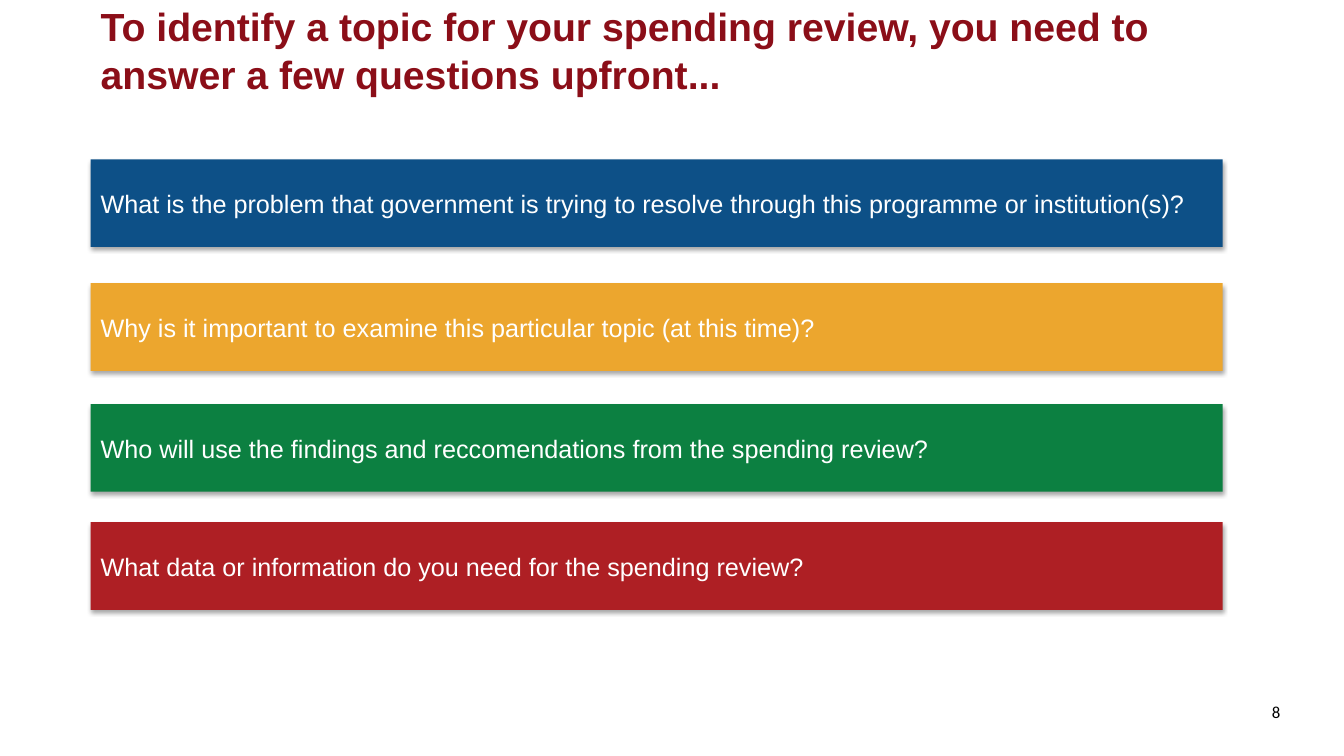
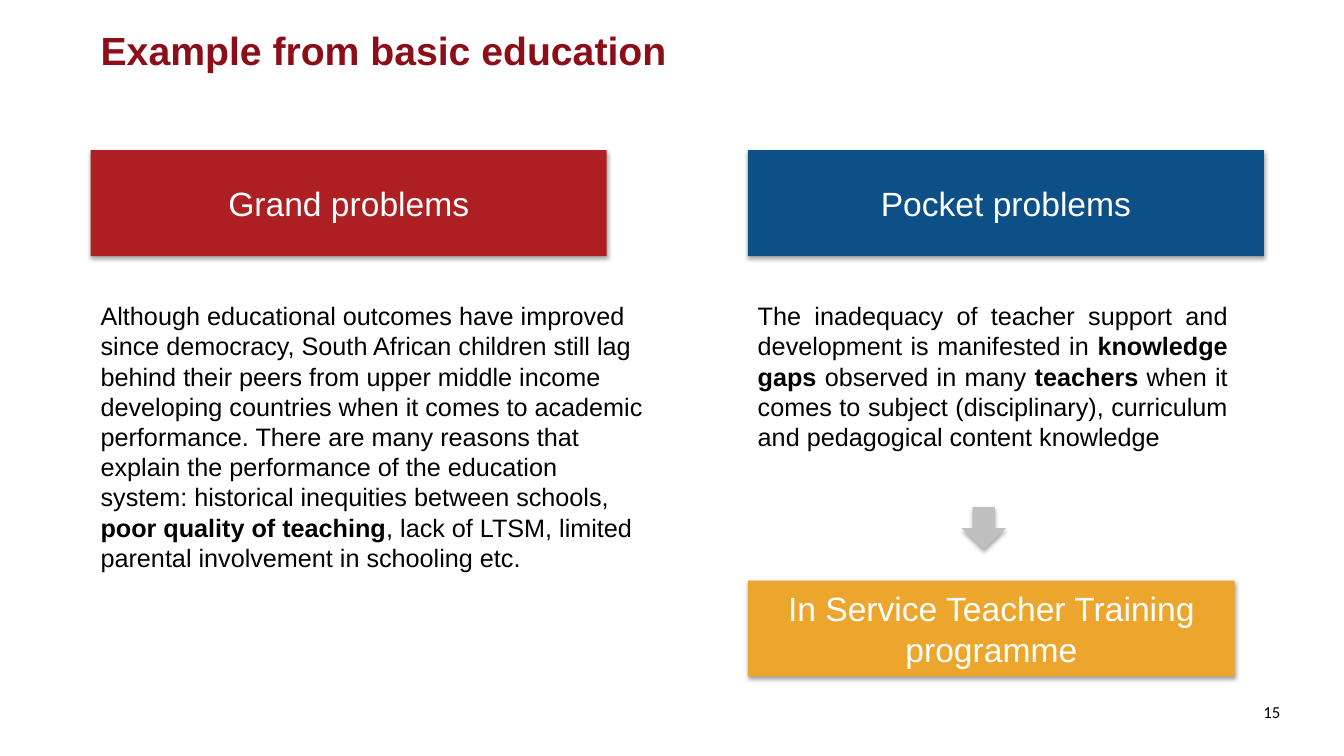
from lxml.etree import SubElement
from pptx import Presentation
from pptx.dml.color import RGBColor
from pptx.enum.shapes import MSO_SHAPE
from pptx.enum.text import MSO_ANCHOR, PP_ALIGN
from pptx.oxml.ns import qn
from pptx.util import Pt

BLACK, WHITE, GREY, MAROON = "000000", "FFFFFF", "BFBFBF", "8B0E18"
BLUE, AMBER, GREEN, RED = "0D5087", "ECA62E", "0C8041", "AE1F24"
LEFT = 64.8
RIGHT_COLUMN = 534.2


def rgb(color):
    return RGBColor.from_string(color)


def add_text(sp, runs, size, color, align=PP_ALIGN.LEFT, anchor=MSO_ANCHOR.TOP, font="Arial"):
    """Fill a shape with one paragraph of (text, bold) runs."""
    tf = sp.text_frame
    tf.word_wrap = True
    tf.vertical_anchor = anchor
    p = tf.paragraphs[0]
    p.alignment = align
    for text, bold in runs:
        r = p.add_run()
        r.text = text
        r.font.name = font
        r.font.size = Pt(size)
        r.font.bold = bold
        r.font.color.rgb = rgb(color)


def add_text_box(s, box, runs, size, color, **style):
    sp = s.shapes.add_textbox(*map(Pt, box))
    add_text(sp, runs, size, color, **style)


def add_shadow(sp):
    sp.shadow.inherit = False
    effects = sp._element.spPr.find(qn("a:effectLst"))
    shadow = SubElement(effects, qn("a:outerShdw"), blurRad=str(Pt(3.1)),
                        dist=str(Pt(1.8)), dir="5400000", rotWithShape="0")
    black = SubElement(shadow, qn("a:srgbClr"), val=BLACK)
    SubElement(black, qn("a:alpha"), val="35000")


def add_block(s, box, fill, shape=MSO_SHAPE.RECTANGLE):
    sp = s.shapes.add_shape(shape, *map(Pt, box))
    sp.fill.solid()
    sp.fill.fore_color.rgb = rgb(fill)
    sp.line.fill.background()
    add_shadow(sp)
    return sp


def add_banner(s, box, fill, text, size=24, align=PP_ALIGN.CENTER):
    sp = add_block(s, box, fill)
    add_text(sp, [(text, False)], size, WHITE, align, MSO_ANCHOR.MIDDLE)


def add_slide(prs, title, number):
    """Add a blank slide with the shared title and page number."""
    s = prs.slides.add_slide(prs.slide_layouts[6])
    add_text_box(s, (866.9, 497.5, 54.7, 28), [(number, False)], 12, BLACK,
                 align=PP_ALIGN.RIGHT, font="Calibri")
    add_text_box(s, (LEFT, 19.4, 828.7, 32.4), [(title, True)], 28, MAROON,
                 anchor=MSO_ANCHOR.MIDDLE)
    return s


def add_column(s, left, heading, fill, text_width, text_height, runs, align=PP_ALIGN.LEFT):
    """Place a heading banner with its paragraph below."""
    add_banner(s, (left, 107.3, 368.6, 75.6), fill, heading)
    add_text_box(s, (left, 211, text_width, text_height), runs, 18, BLACK, align=align)


def questions_slide(prs):
    s = add_slide(prs, "To identify a topic for your spending review, you need to "
                       "answer a few questions upfront...", "8")
    questions = [
        (113.8, BLUE, "What is the problem that government is trying to resolve "
                      "through this programme or institution(s)?"),
        (202.3, AMBER, "Why is it important to examine this particular topic (at this time)?"),
        (288.7, GREEN, "Who will use the findings and reccomendations from the spending review?"),
        (373, RED, "What data or information do you need for the spending review?"),
    ]
    for top, fill, text in questions:
        add_banner(s, (LEFT, top, 808.6, 62.6), fill, text, 18, PP_ALIGN.LEFT)


def example_slide(prs):
    s = add_slide(prs, "Example from basic education", "15")
    add_column(s, LEFT, "Grand problems", RED, 403.2, 203.8, [
        ("Although educational outcomes have improved since democracy, South African "
         "children still lag behind their peers from upper middle income developing "
         "countries when it comes to academic performance. There are many reasons that "
         "explain the performance of the education system: historical inequities "
         "between schools, ", False),
        ("poor quality of teaching", True),
        (", lack of LTSM, limited parental involvement in schooling etc.", False),
    ])
    add_column(s, RIGHT_COLUMN, "Pocket problems", BLUE, 349.9, 138.2, [
        ("The inadequacy of teacher support and development is manifested in ", False),
        ("knowledge gaps ", True),
        ("observed in many ", False),
        ("teachers", True),
        (" when it comes to subject (disciplinary), curriculum and pedagogical "
         "content knowledge", False),
    ], PP_ALIGN.JUSTIFY)
    add_banner(s, (RIGHT_COLUMN, 414.7, 347.8, 68.4), AMBER,
               "In Service Teacher Training programme")
    add_block(s, (686.9, 362.2, 31.7, 30.2), GREY, MSO_SHAPE.DOWN_ARROW)


def main():
    prs = Presentation()
    prs.slide_width, prs.slide_height = Pt(960), Pt(540)
    questions_slide(prs)
    example_slide(prs)
    prs.save("out.pptx")


if __name__ == "__main__":
    main()
